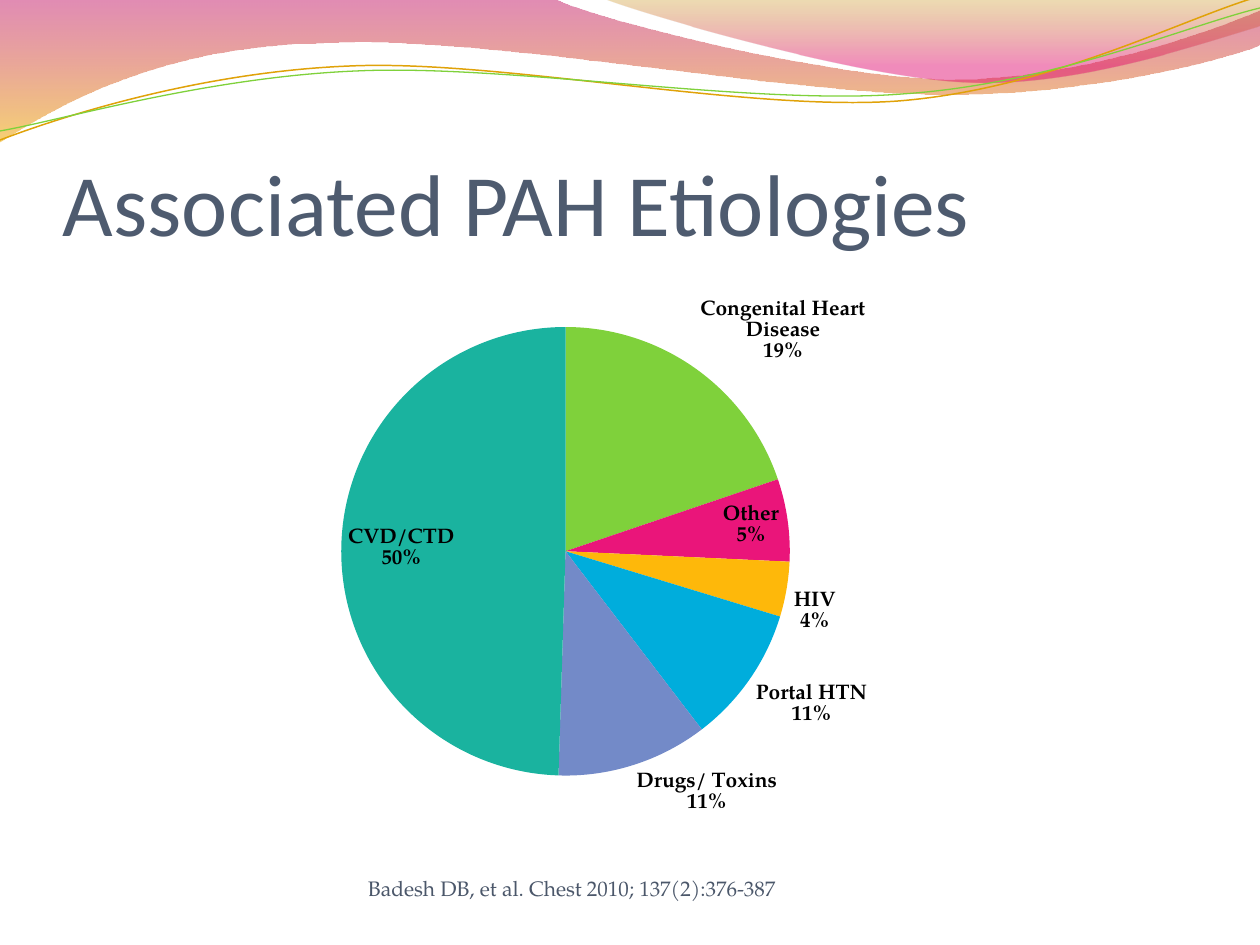
from lxml.etree import SubElement
from pptx import Presentation
from pptx.chart.data import CategoryChartData
from pptx.dml.color import RGBColor
from pptx.enum.chart import XL_CHART_TYPE, XL_LABEL_POSITION as Pos
from pptx.enum.text import MSO_ANCHOR as Anchor
from pptx.oxml import parse_xml
from pptx.oxml.ns import nsdecls, qn
from pptx.util import Pt

PX = 914400 / 126
SERIF = "TeX Gyre Pagella"

PINK, AMBER = RGBColor(0xBD, 0x00, 0x59), RGBColor(0xF0, 0xAB, 0x00)
OCHRE, MAGENTA = RGBColor(0xC3, 0x8B, 0x00), RGBColor(0xE1, 0x00, 0x6B)
GOLD, GREEN = RGBColor(0xE0, 0xA2, 0x09), RGBColor(0x7F, 0xD1, 0x3B)
SLATE, GREY = RGBColor(0x4E, 0x5B, 0x6F), RGBColor(0x4B, 0x57, 0x6A)
BLACK = RGBColor(0, 0, 0)

TITLE = "Associated PAH Etiologies"
CITATION = "Badesh DB, et al. Chest 2010; 137(2):376-387"

# name, value, percentage shown, colour, label position
ETIOLOGIES = [
    ("Congenital Heart Disease", 20, 19, GREEN, Pos.OUTSIDE_END),
    ("Other", 6, 5, RGBColor(0xEA, 0x15, 0x7A), Pos.BEST_FIT),
    ("HIV", 4, 4, RGBColor(0xFE, 0xB8, 0x0A), Pos.OUTSIDE_END),
    ("Portal HTN", 10, 11, RGBColor(0x00, 0xAD, 0xDC), Pos.BEST_FIT),
    ("Drugs/ Toxins", 11, 11, RGBColor(0x73, 0x8A, 0xC8), Pos.OUTSIDE_END),
    ("CVD/CTD", 50, 50, RGBColor(0x1A, 0xB3, 0x9F), Pos.BEST_FIT),
]
CHART_BOX = (84, 262, 1081, 573)
PIE_BOX = (341, 327, 449, 449)

# Outlines in px: a pair of numbers is a line's end, six are a Bézier curve.
# Bands also have gradient stops: position, colour, opacity in percent.
BANDS = [
    ([(0, 0), (554, -1), (600, 21, 837, 79, 955, 79),
      (1075, 79, 1207, 33, 1260, 11), (1261, 45),
      (1239, 55, 1096, 96, 940, 94), (784, 94, 481, 35, 324, 43),
      (163, 45, 58, 105, -1, 142)],
     [(0, PINK, 45), (1, AMBER, 55)]),
    ([(604, -1), (641, 14, 859, 78, 969, 82),
      (1079, 87, 1211, 40, 1260, 26), (1260, 0)],
     [(0, OCHRE, 30), (0.8, MAGENTA, 45)]),
]
WAVES = [
    ([(0, 140), (60, 117, 199, 72, 349, 66), (498, 59, 747, 112, 898, 101),
      (1050, 89, 1182, 19, 1257, -3)], GOLD, 0.85),
    ([(0, 131), (59, 121, 207, 77, 357, 71), (508, 64, 752, 106, 903, 94),
      (1053, 84, 1186, 26, 1260, 8)], GREEN, 0.75),
]


def emu(*lengths):
    return [round(n * PX) for n in lengths]


def add_outline(slide, outline, close):
    """Draw straight lines between the ends, then bend those that are curves."""
    start, *ends = [emu(*step[-2:]) for step in outline]
    builder = slide.shapes.build_freeform(*start)
    builder.add_line_segments(ends, close=close)
    sp = builder.convert_to_shape()
    sp.shadow.inherit = False
    lines = list(sp.element.iter(qn("a:lnTo")))
    for line, step in zip(lines, outline[1:]):
        if len(step) == 6:
            line.tag = qn("a:cubicBezTo")
            controls = emu(*step[:4])
            for i in (0, 2):
                pt = SubElement(line, qn("a:pt"), x=str(controls[i] - sp.left),
                                y=str(controls[i + 1] - sp.top))
                line.insert(i // 2, pt)
    return sp


def add_band(slide, outline, stops):
    sp = add_outline(slide, outline, True)
    sp.line.fill.background()
    sp.fill.gradient()
    sp.fill.gradient_angle = 270
    elements = sp.element.iter(qn("a:gs"))
    for stop, gs, (position, color, opacity) in zip(sp.fill.gradient_stops, elements, stops):
        stop.position = position
        stop.color.rgb = color
        SubElement(gs[0], qn("a:alpha"), val=str(opacity * 1000))


def add_wave(slide, outline, color, width):
    sp = add_outline(slide, outline, False)
    sp.fill.background()
    sp.line.color.rgb = color
    sp.line.width = Pt(width)


def add_text(slide, box, text, font, size, color, anchor):
    tf = slide.shapes.add_textbox(*emu(*box)).text_frame
    tf.word_wrap = True
    tf.vertical_anchor = anchor
    tf.margin_left = tf.margin_right = tf.margin_top = tf.margin_bottom = 0
    tf.text = text
    f = tf.paragraphs[0].runs[0].font
    f.name, f.size, f.color.rgb = font, Pt(size), color


def place_plot(chart):
    x, y, w, h = CHART_BOX
    px, py, pw, ph = PIE_BOX
    parts = {"x": (px - x) / w, "y": (py - y) / h, "w": pw / w, "h": ph / h}
    values = "".join(f'<c:{k} val="{v:.3f}"/>' for k, v in parts.items())
    plot_area = chart.element.find(".//" + qn("c:plotArea"))
    for old in plot_area.findall(qn("c:layout")):
        plot_area.remove(old)
    plot_area.insert(0, parse_xml(
        f'<c:layout {nsdecls("c")}><c:manualLayout><c:layoutTarget val="inner"/>'
        f'<c:xMode val="edge"/><c:yMode val="edge"/>{values}'
        '</c:manualLayout></c:layout>'))


def add_pie(slide):
    data = CategoryChartData()
    data.categories = [str(i) for i in range(1, len(ETIOLOGIES) + 1)]
    data.add_series("Series 1", [row[1] for row in ETIOLOGIES])
    chart = slide.shapes.add_chart(XL_CHART_TYPE.PIE, *emu(*CHART_BOX), data).chart
    chart.has_legend = chart.has_title = False
    chart.font.name, chart.font.size, chart.font.color.rgb = SERIF, Pt(10), BLACK
    place_plot(chart)
    plot = chart.plots[0]
    plot.vary_by_categories = True
    for i, (name, _, percent, color, position) in enumerate(ETIOLOGIES):
        point = plot.series[0].points[i]
        point.format.fill.solid()
        point.format.fill.fore_color.rgb = color
        point.format.line.fill.background()
        label = point.data_label
        label.text_frame.text = f"{name}\n{percent}%"
        label.position = position
        for p in label.text_frame.paragraphs:
            f = p.runs[0].font
            f.name, f.size, f.bold, f.color.rgb = SERIF, Pt(12), True, BLACK


def main():
    prs = Presentation()
    prs.slide_width, prs.slide_height = emu(1260, 945)
    slide = prs.slides.add_slide(prs.slide_layouts[6])
    for band in BANDS:
        add_band(slide, *band)
    for wave in WAVES:
        add_wave(slide, *wave)
    add_text(slide, (63, 97, 1134, 157), TITLE, "Calibri", 50, SLATE, Anchor.BOTTOM)
    add_pie(slide)
    add_text(slide, (368, 876, 462, 50), CITATION, SERIF, 12, GREY, Anchor.TOP)
    prs.save("out.pptx")


if __name__ == "__main__":
    main()
